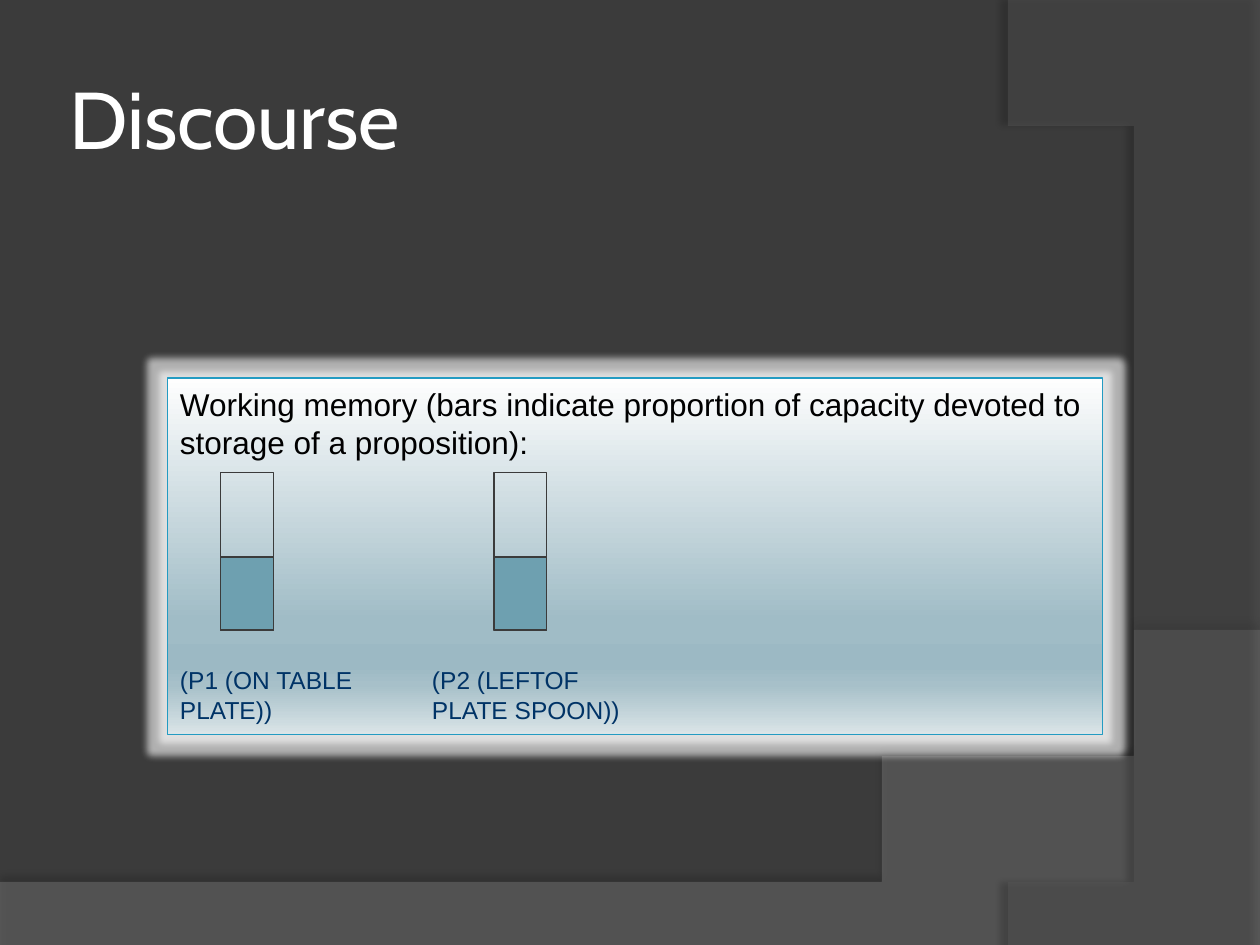
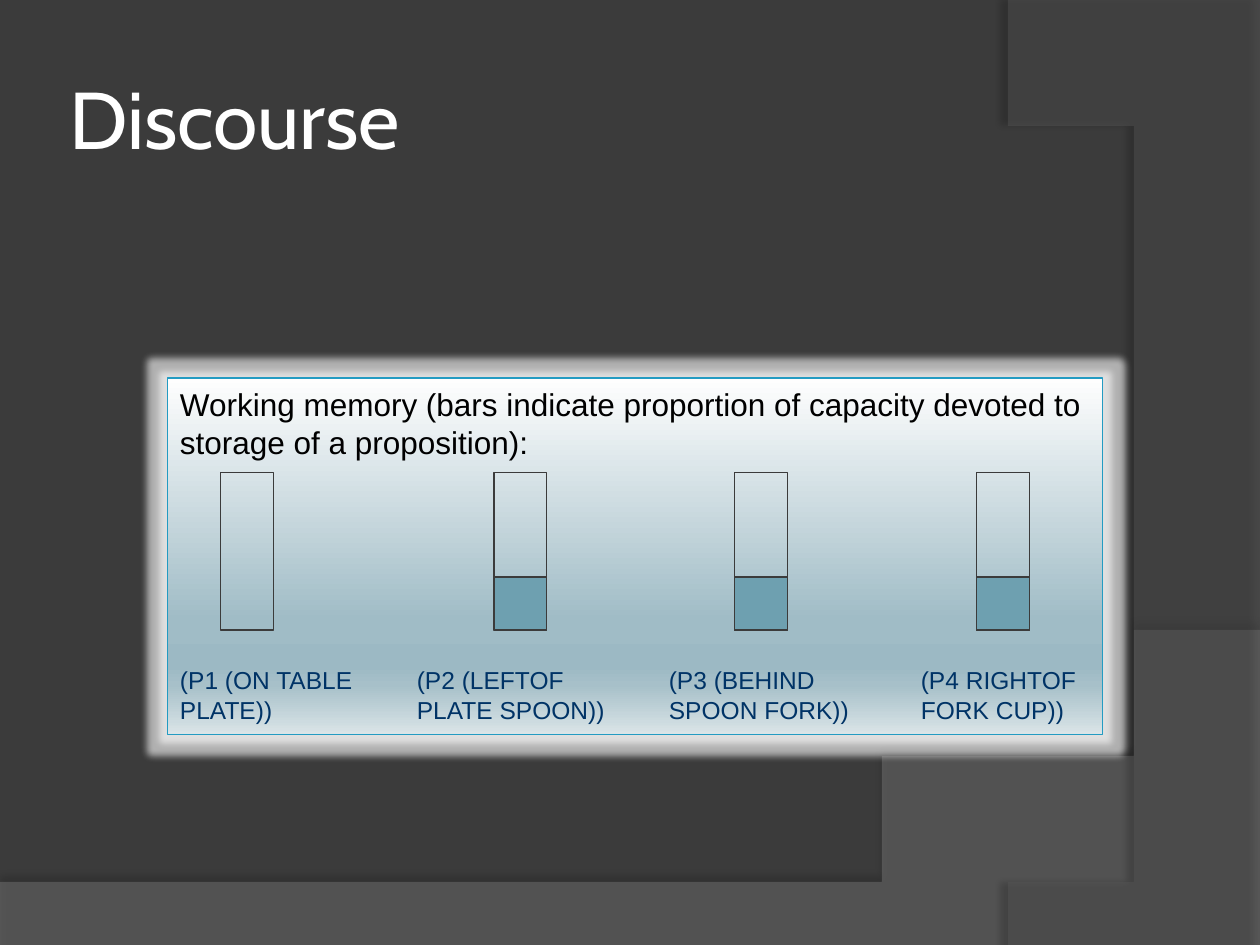
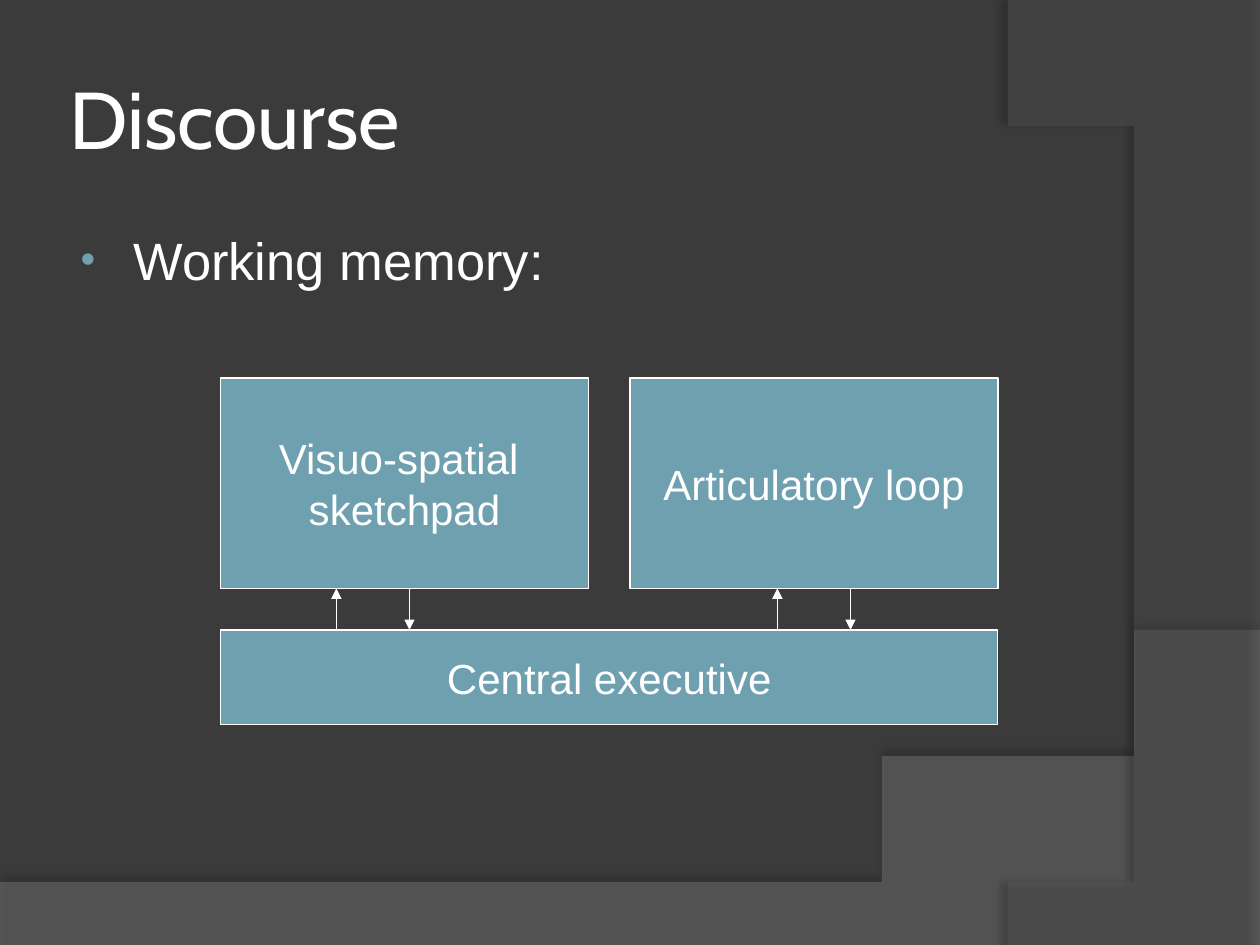
import lxml.etree
import pptx
import pptx.dml.color
import pptx.enum.dml
import pptx.enum.shapes
import pptx.enum.text
import pptx.oxml.ns
import pptx.util

Inches = pptx.util.Inches
Pt = pptx.util.Pt
RGBColor = pptx.dml.color.RGBColor
RECTANGLE = pptx.enum.shapes.MSO_SHAPE.RECTANGLE
ALIGN = pptx.enum.text.PP_ALIGN
ANCHOR = pptx.enum.text.MSO_ANCHOR
qn = pptx.oxml.ns.qn

# Shared style
CHARCOAL = RGBColor(0x3B, 0x3B, 0x3B)
SWEEP_GREY = RGBColor(0x7C, 0x7C, 0x7C)
ARC_GREY = RGBColor(0x59, 0x59, 0x59)
WHITE = RGBColor(0xFF, 0xFF, 0xFF)
BLACK = RGBColor(0, 0, 0)
NAVY = RGBColor(0x00, 0x33, 0x66)
TEAL = RGBColor(0x6E, 0xA0, 0xB0)
PANEL_EDGE = RGBColor(0x23, 0x9B, 0xC2)
PANEL_STOPS = [
    (0, RGBColor(0xFE, 0xFE, 0xFE)), (68, RGBColor(0xA0, 0xBC, 0xC6)),
    (81, RGBColor(0x9C, 0xB9, 0xC4)), (86, RGBColor(0xA7, 0xC0, 0xC9)),
    (100, RGBColor(0xDA, 0xE4, 0xE7)),
]
TITLE_FONT, BODY_FONT = "Cabin", "Arial"
LINE_HEIGHT = 1.215
TITLE_AND_BODY, TITLE_ONLY = 1, 5

# Content
TITLE = "Discourse"
PANEL_HEADING = ("Working memory (bars indicate proportion of capacity "
                 "devoted to storage of a proposition):")
BAR_LEFTS = [1.75, 3.92, 5.83, 7.75]
BAR_TOP, BAR_WIDTH, BAR_HEIGHT = 3.75, 0.42, 1.25
MEMORY_PAGES = [
    {"labels": ["(P1 (ON TABLE \t(P2 (LEFTOF", "PLATE))\tPLATE SPOON))"],
     "tabs": [2], "levels": [0.58, 0.58]},
    {"labels": ["(P1 (ON TABLE \t(P2 (LEFTOF\t(P3 (BEHIND\t(P4 RIGHTOF",
                "PLATE))\tPLATE SPOON))\tSPOON FORK))\tFORK CUP))"],
     "tabs": [1.88, 3.88, 5.88], "levels": [0, 0.42, 0.42, 0.42]},
]
BULLET = "Working memory:"
STORE_BOTTOM, EXECUTIVE_TOP = 4.67, 5
COMPONENTS = [
    (["Visuo-spatial ", "sketchpad"], (1.75, 3, 2.92, 1.67)),
    (["Articulatory loop"], (5, 3, 2.92, 1.67)),
    (["Central executive"], (1.75, EXECUTIVE_TOP, 6.17, 0.75)),
]
ARROW_PAIRS = [(2.67, 3.25), (6.17, 6.75)]  # upward, downward

# Curved background areas: start, straight corners, curve (two handles and end)
SWEEP = [(0, 7.05), (0, 7.5), (10, 7.5), (10, 5.2)], [(5.59, 7.29), (3.91, 7.19), (0, 7.05)]
ARC = [(10, 0.02), (10, 7.5), (8.21, 7.5)], [(9.35, 6.19), (10.18, 3), (8, 0)]


def add_xml(parent, tag, **attributes):
    child = lxml.etree.SubElement(parent, qn(tag))
    for name, value in attributes.items():
        child.set(name, str(value))
    return child


def add_effect(shape, tag, color, opacity, **attributes):
    shape.shadow.inherit = False
    effects = shape._element.spPr.find(qn("a:effectLst"))
    tint = add_xml(add_xml(effects, tag, **attributes), "a:srgbClr", val=color)
    add_xml(tint, "a:alpha", val=opacity * 1000)


def curve_points(start, handles, steps=40):
    """Points along a cubic curve, without its start."""
    anchors = [start, *handles]
    points = []
    for step in range(1, steps + 1):
        t = step / steps
        weights = ((1 - t) ** 3, 3 * t * (1 - t) ** 2, 3 * t * t * (1 - t), t ** 3)
        points.append(tuple(sum(w * anchor[axis] for w, anchor in zip(weights, anchors))
                            for axis in (0, 1)))
    return points


def add_master_area(deck, page, outline, color, opacity, shadow_opacity, distance, angle):
    """Build a curved area and move it behind everything on the slide master."""
    corners, handles = outline
    builder = page.shapes.build_freeform(*corners[0], scale=Inches(1))
    builder.add_line_segments(corners[1:] + curve_points(corners[-1], handles), close=True)
    area = builder.convert_to_shape()
    area.fill.solid()
    area.fill.fore_color.rgb = color
    add_xml(area._element.spPr.find(".//" + qn("a:srgbClr")), "a:alpha", val=opacity * 1000)
    area.line.fill.background()
    add_effect(area, "a:outerShdw", BLACK, shadow_opacity,
               blurRad=Pt(4), dist=Pt(distance), dir=angle * 60000)
    deck.slide_master.shapes._spTree.append(area._element)


def write(para, text, size, color, font=BODY_FONT):
    para.line_spacing = Pt(size * LINE_HEIGHT)
    para.space_before = Pt(0)
    span = para.add_run()
    span.text = text
    span.font.name = font
    span.font.size = Pt(size)
    span.font.color.rgb = color


def place(shape, left, top, width, height):
    shape.left, shape.top = Inches(left), Inches(top)
    shape.width, shape.height = Inches(width), Inches(height)


def add_page(deck, layout):
    page = deck.slides.add_slide(deck.slide_layouts[layout])
    title = page.shapes.title
    place(title, 0.5, 0.3, 8.17, 1.25)
    frame = title.text_frame
    frame.vertical_anchor = ANCHOR.MIDDLE
    frame.margin_left = frame.margin_right = Inches(0.05)
    frame.margin_top = frame.margin_bottom = Inches(0.05)
    para = frame.paragraphs[0]
    para.alignment = ALIGN.LEFT
    write(para, TITLE, 46, WHITE, TITLE_FONT)
    return page


def add_box(shapes, bounds, fill, edge):
    box = shapes.add_shape(RECTANGLE, *map(Inches, bounds))
    box.shadow.inherit = False
    if fill is None:
        box.fill.background()
    else:
        box.fill.solid()
        box.fill.fore_color.rgb = fill
    box.line.color.rgb = edge
    box.line.width = Pt(0.75)
    return box


def add_panel(page, labels, tabs):
    panel = add_box(page.shapes, (1.33, 3, 7.42, 2.83), None, PANEL_EDGE)
    panel.fill.gradient()
    panel.fill.gradient_angle = 270
    stops = panel._element.spPr.find(".//" + qn("a:gsLst"))
    for stop in list(stops):
        stops.remove(stop)
    for position, color in PANEL_STOPS:
        add_xml(add_xml(stops, "a:gs", pos=position * 1000), "a:srgbClr", val=color)
    add_effect(panel, "a:glow", WHITE, 60, rad=Pt(8))

    frame = panel.text_frame
    frame.word_wrap = True
    frame.vertical_anchor = ANCHOR.TOP
    heading = frame.paragraphs[0]
    heading.alignment = ALIGN.LEFT
    write(heading, PANEL_HEADING, 18, BLACK)
    for index, label in enumerate(labels):
        para = frame.add_paragraph()
        para.alignment = ALIGN.LEFT
        write(para, label, 14, NAVY)
        if index == 0:
            para.space_before = Pt(116.6)  # room for the bars
        tab_list = add_xml(para._p.get_or_add_pPr(), "a:tabLst")
        for tab in tabs:
            add_xml(tab_list, "a:tab", pos=Inches(tab), algn="l")


def add_memory_page(page, labels, tabs, levels):
    add_panel(page, labels, tabs)
    for left, level in zip(BAR_LEFTS, levels):
        add_box(page.shapes, (left, BAR_TOP, BAR_WIDTH, BAR_HEIGHT), None, CHARCOAL)
        if level:
            top = BAR_TOP + BAR_HEIGHT - level
            add_box(page.shapes, (left, top, BAR_WIDTH, level), TEAL, CHARCOAL)


def add_arrow(shapes, x, start, end):
    arrow = shapes.add_connector(pptx.enum.shapes.MSO_CONNECTOR.STRAIGHT,
                                 Inches(x), Inches(start), Inches(x), Inches(end))
    arrow.line.color.rgb = WHITE
    arrow.line.width = Pt(0.75)
    add_xml(arrow.line._get_or_add_ln(), "a:tailEnd", type="triangle")
    add_xml(arrow._element.spPr, "a:effectLst")


def add_model_page(page):
    # Bullet
    body = page.placeholders[1]
    place(body, 0.5, 1.75, 8.17, 4.95)
    para = body.text_frame.paragraphs[0]
    write(para, BULLET, 30, WHITE)
    properties = para._p.get_or_add_pPr()
    properties.set("marL", str(Inches(0.46)))
    properties.set("indent", str(Inches(-0.42)))
    add_xml(add_xml(properties, "a:buClr"), "a:srgbClr", val=TEAL)
    add_xml(properties, "a:buSzPct", val=80000)
    add_xml(properties, "a:buFont", typeface=BODY_FONT)
    add_xml(properties, "a:buChar", char="•")

    # Memory components and the arrows between them
    model = page.shapes.add_group_shape().shapes
    for lines, bounds in COMPONENTS:
        frame = add_box(model, bounds, TEAL, WHITE).text_frame
        frame.word_wrap = False
        frame.vertical_anchor = ANCHOR.MIDDLE
        for index, line in enumerate(lines):
            para = frame.add_paragraph() if index else frame.paragraphs[0]
            para.alignment = ALIGN.CENTER
            write(para, line, 24, WHITE)
    for up, down in ARROW_PAIRS:
        add_arrow(model, up, EXECUTIVE_TOP, STORE_BOTTOM)
        add_arrow(model, down, STORE_BOTTOM, EXECUTIVE_TOP)


def main():
    deck = pptx.Presentation()
    deck.slide_width, deck.slide_height = Inches(10), Inches(7.5)
    background = deck.slide_master.background.fill
    background.solid()
    background.fore_color.rgb = CHARCOAL

    for content in MEMORY_PAGES:
        add_memory_page(add_page(deck, TITLE_ONLY), **content)
    model_page = add_page(deck, TITLE_AND_BODY)
    add_model_page(model_page)

    add_master_area(deck, model_page, SWEEP, SWEEP_GREY, 45, 35, 3.5, 270)
    add_master_area(deck, model_page, ARC, ARC_GREY, 40, 45, 4, 180)
    deck.save("out.pptx")


if __name__ == "__main__":
    main()
